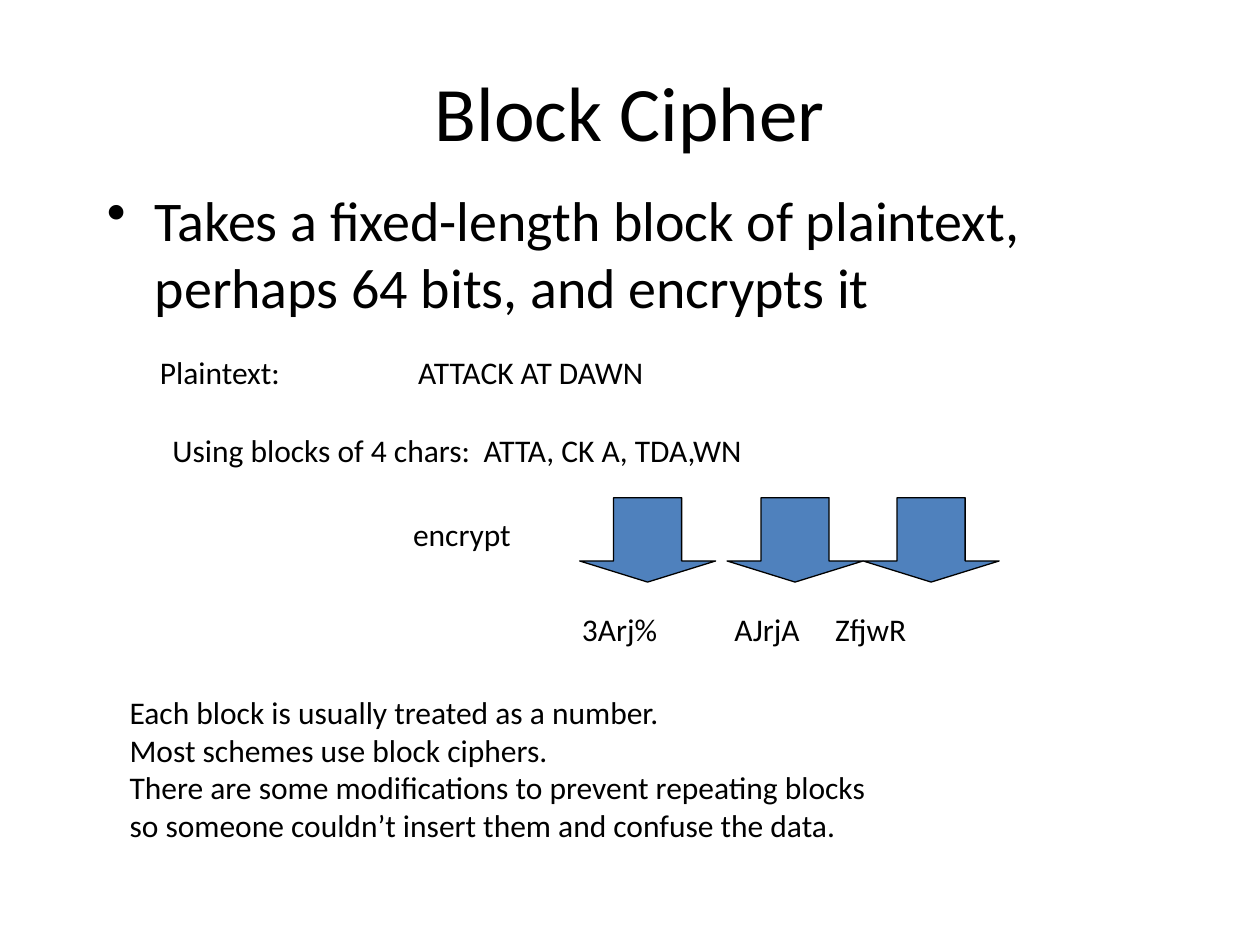
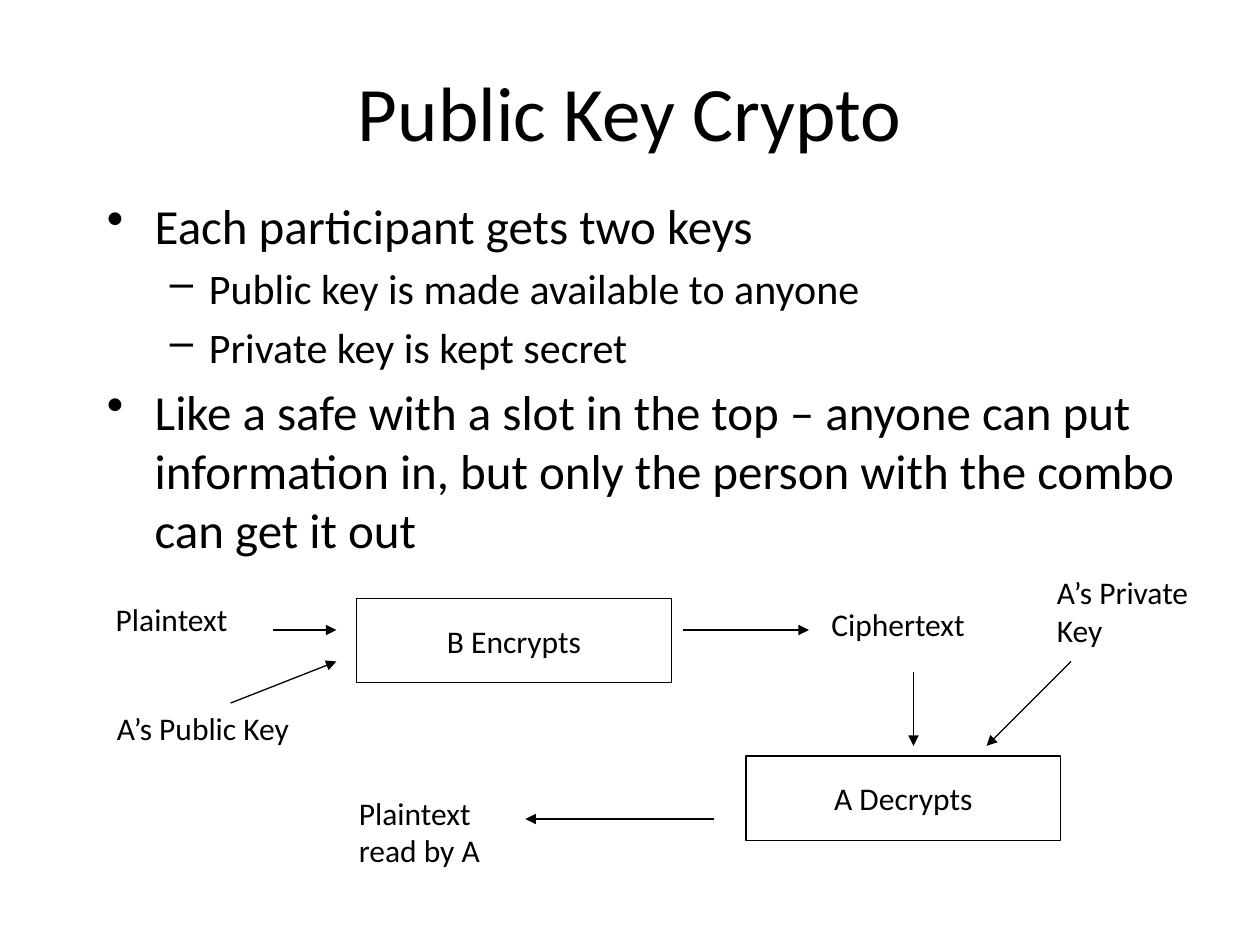
from lxml import etree
from pptx import Presentation
from pptx.dml.color import RGBColor
from pptx.enum.shapes import MSO_CONNECTOR, MSO_SHAPE
from pptx.enum.text import MSO_ANCHOR, PP_ALIGN
from pptx.oxml.ns import qn
from pptx.util import Inches, Pt

BLACK = RGBColor(0x00, 0x00, 0x00)
BLUE = RGBColor(0x4F, 0x81, 0xBD)
FONT = "Calibri"
LABEL_SIZE = 18
LINE_WIDTH = Pt(0.75)
CENTER, LEFT = PP_ALIGN.CENTER, PP_ALIGN.LEFT
MIDDLE, TOP = MSO_ANCHOR.MIDDLE, MSO_ANCHOR.TOP
DOWN_ARROW, RECTANGLE = MSO_SHAPE.DOWN_ARROW, MSO_SHAPE.RECTANGLE
STRAIGHT = MSO_CONNECTOR.STRAIGHT
# bullet character, text indent, hanging indent for each level
BULLETS = (("•", 0.38, 0.38), ("–", 0.81, 0.31))


def set_font(p, size):
    p.font.name = FONT
    p.font.size = Pt(size)
    p.font.color.rgb = BLACK


def add_text(s, box, lines, size=LABEL_SIZE, align=LEFT, anchor=TOP):
    """Add a text box with one paragraph per line and return its paragraphs."""
    tf = s.shapes.add_textbox(*map(Inches, box)).text_frame
    tf.word_wrap = True
    tf.vertical_anchor = anchor
    tf.text = "\n".join(lines)
    for p in tf.paragraphs:
        p.alignment = align
        set_font(p, size)
    return tf.paragraphs


def add_tabbed(s, box, parts, stops):
    """Add one line whose parts start at the given tab stops."""
    p = add_text(s, box, ["\t".join(parts)])[0]
    tabs = etree.Element(qn("a:tabLst"))
    for stop in stops:
        etree.SubElement(tabs, qn("a:tab"), pos=str(Inches(stop)), algn="l")
    p._p.pPr.find(qn("a:defRPr")).addprevious(tabs)


def add_title(s, title):
    add_text(s, (0.75, 0.25, 8.5, 1.25), [title], 44, CENTER, MIDDLE)


def add_bullets(s, box, items, sizes):
    """Add (level, text) items, with one font size per level."""
    paragraphs = add_text(s, box, [text for _, text in items])
    for p, (level, _) in zip(paragraphs, items):
        char, indent, hanging = BULLETS[level]
        set_font(p, sizes[level])
        p.level = level
        p.space_before = Pt(sizes[level] * 0.2)
        pPr = p._p.pPr
        pPr.set("marL", str(Inches(indent)))
        pPr.set("indent", str(-Inches(hanging)))
        bullet = etree.Element(qn("a:buChar"), char=char)
        pPr.find(qn("a:defRPr")).addprevious(bullet)


def add_outlined(s, kind, box, fill=None):
    sp = s.shapes.add_shape(kind, *map(Inches, box))
    sp.shadow.inherit = False
    sp.line.color.rgb = BLACK
    sp.line.width = LINE_WIDTH
    if fill is None:
        sp.fill.background()
    else:
        sp.fill.solid()
        sp.fill.fore_color.rgb = fill
    return sp


def add_process(s, x, y, name):
    tf = add_outlined(s, RECTANGLE, (x, y, 2.5, 0.67)).text_frame
    tf.vertical_anchor = MIDDLE
    tf.text = name
    p = tf.paragraphs[0]
    p.alignment = CENTER
    set_font(p, LABEL_SIZE)


def add_arrow(s, x1, y1, x2, y2):
    line = s.shapes.add_connector(STRAIGHT, *map(Inches, (x1, y1, x2, y2)))
    line.line.color.rgb = BLACK
    line.line.width = LINE_WIDTH
    etree.SubElement(line.line._get_or_add_ln(), qn("a:tailEnd"), type="triangle")
    etree.SubElement(line._element.spPr, qn("a:effectLst"))


def draw_block_example(s, x, y):
    """Split a message into blocks and encrypt each one."""
    add_tabbed(s, (x, y, 5.29, 0.5), ["Plaintext:", "ATTACK AT DAWN"], [2.05])
    add_tabbed(s, (x + 0.1, y + 0.62, 5.5, 0.4),
               ["Using blocks of 4 chars:", "ATTA, CK A, TDA,WN"], [2.47])
    add_text(s, (x + 2.01, y + 1.29, 1.2, 0.5), ["encrypt"])
    for dx in (3.43, 4.6, 5.68):
        add_outlined(s, DOWN_ARROW, (x + dx, y + 1.2, 1.08, 0.67),
                     BLUE).adjustments[1] = 0.25
    add_tabbed(s, (x + 3.35, y + 2.04, 3.64, 0.5),
               ["3Arj%", "AJrjA", "ZfjwR"], [1.21, 2.01])


def draw_key_flow(s, x, y):
    """Show B encrypting with A's public key and A decrypting."""
    labels = (
        (0.07, 0.21, 1.38, ["Plaintext"]),
        (0.08, 1.08, 2.26, ["A’s Public Key"]),
        (5.75, 0.25, 1.61, ["Ciphertext"]),
        (7.54, 0, 1.71, ["A’s Private", "Key"]),
        (2, 1.75, 1.52, ["Plaintext", "read by A"]),
    )
    for dx, dy, width, lines in labels:
        add_text(s, (x + dx, y + dy, width, 0.4 * len(lines)), lines)
    add_process(s, x + 2.08, y + 0.25, "B Encrypts")
    add_process(s, x + 5.17, y + 1.5, "A Decrypts")
    arrows = (
        (1.42, 0.5, 1.92, 0.5),
        (1.08, 1.08, 1.92, 0.75),
        (4.67, 0.5, 5.67, 0.5),
        (6.5, 0.83, 6.5, 1.42),
        (7.75, 0.75, 7.08, 1.42),
        (4.92, 2, 3.42, 2),
    )
    for x1, y1, x2, y2 in arrows:
        add_arrow(s, x + x1, y + y1, x + x2, y + y2)


def block_cipher_slide(s):
    add_title(s, "Block Cipher")
    add_bullets(s, (0.75, 1.42, 8.5, 1.25), [
        (0, "Takes a fixed-length block of plaintext, perhaps 64 bits, and encrypts it"),
    ], (32,))
    draw_block_example(s, 1.17, 2.75)
    add_text(s, (0.93, 5.45, 7.86, 1.7), [
        "Each block is usually treated as a number.",
        "Most schemes use block ciphers.",
        "There are some modifications to prevent repeating blocks",
        "so someone couldn’t insert them and confuse the data.",
    ])


def public_key_slide(s):
    add_title(s, "Public Key Crypto")
    add_bullets(s, (0.75, 1.5, 8.83, 3.25), [
        (0, "Each participant gets two keys"),
        (1, "Public key is made available to anyone"),
        (1, "Private key is kept secret"),
        (0, "Like a safe with a slot in the top – anyone can put information in, "
            "but only the person with the combo can get it out"),
    ], (28, 24))
    draw_key_flow(s, 0.75, 4.5)


def main():
    prs = Presentation()
    prs.slide_width, prs.slide_height = Inches(10), Inches(7.5)
    blank = prs.slide_layouts[6]
    for build in (block_cipher_slide, public_key_slide):
        build(prs.slides.add_slide(blank))
    prs.save("out.pptx")


if __name__ == "__main__":
    main()
